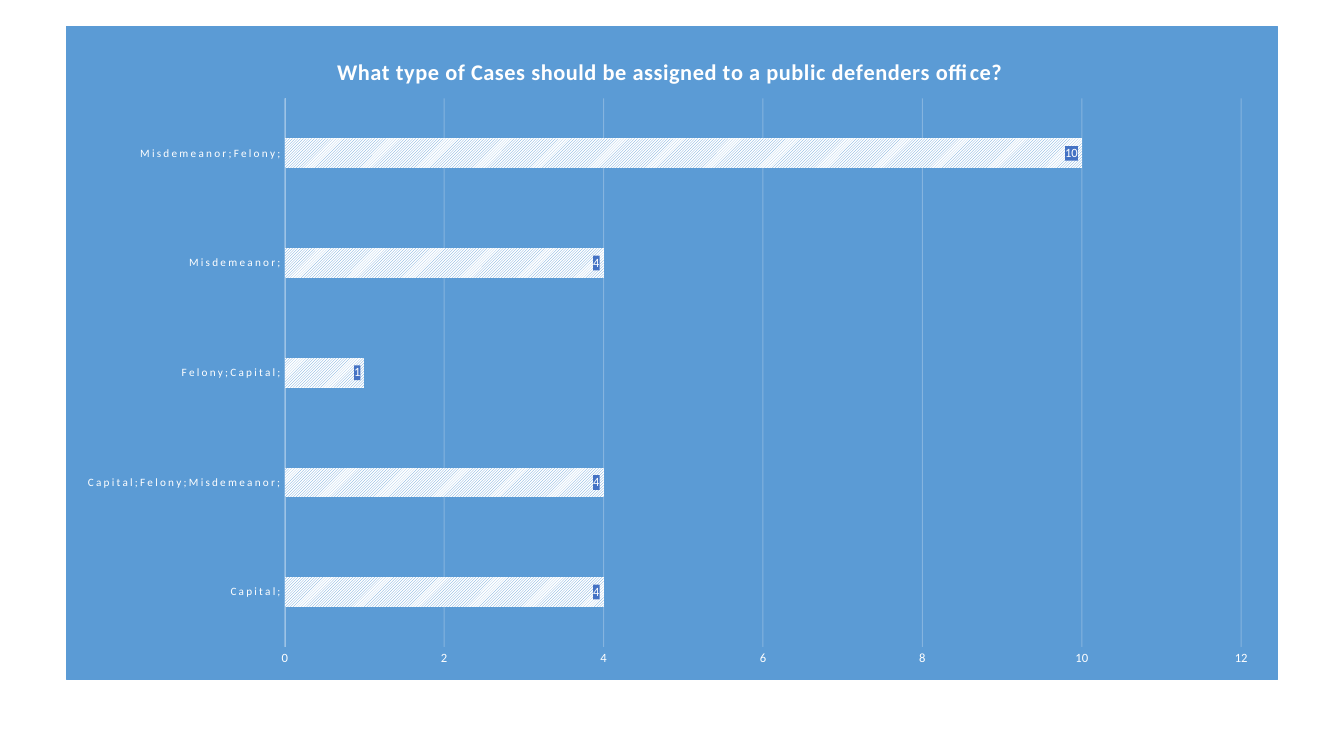
import pptx
import pptx.chart.data
import pptx.dml.color
import pptx.enum.chart
import pptx.enum.dml
import pptx.oxml
import pptx.oxml.ns
import pptx.util
from pptx.util import Cm

# Content
TITLE = "What type of Cases should be assigned to a public defenders office?"
ANSWERS = [
    ("Capital;", 4),
    ("Capital;Felony;Misdemeanor;", 4),
    ("Felony;Capital;", 1),
    ("Misdemeanor;", 4),
    ("Misdemeanor;Felony;", 10),
]
COLORS = {"panel": "5B9BD5", "text": "FFFFFF", "label": "4472C4", "axis": "9DC3E6"}
FONT = "Calibri"
NS = pptx.oxml.ns.nsdecls("c", "a")
qn = pptx.oxml.ns.qn


def rgb(name):
    return pptx.dml.color.RGBColor.from_string(COLORS[name])


def style_font(font, size, bold=False, spacing=None):
    font.name, font.size, font.bold = FONT, pptx.util.Pt(size), bold
    font.color.rgb = rgb("text")
    if spacing is not None:
        font._rPr.set("spc", str(spacing))


def add_text(tf, text, **fmt):
    p = tf.paragraphs[0]
    r = p.add_run()
    r.text = text
    style_font(r.font, **fmt)


def solid_box(fill, line=None):
    """Shape properties with a solid fill and an optional 0.75 pt border."""
    paint = '<a:solidFill><a:srgbClr val="%s"/></a:solidFill>'
    border = paint % COLORS[line] if line else "<a:noFill/>"
    return pptx.oxml.parse_xml(
        f'<c:spPr {NS}>{paint % COLORS[fill]}<a:ln w="9525">{border}</a:ln></c:spPr>')


def place(parent, index, target="", **fractions):
    """Fix a chart part at fractions of the chart's size."""
    for old in parent.findall(qn("c:layout")):
        parent.remove(old)
    inner = f'<c:layoutTarget val="{target}"/>' if target else ""
    modes = '<c:xMode val="edge"/><c:yMode val="edge"/>'
    values = "".join(f'<c:{k} val="{v}"/>' for k, v in fractions.items())
    parent.insert(index, pptx.oxml.parse_xml(
        f"<c:layout {NS}><c:manualLayout>{inner}{modes}{values}</c:manualLayout></c:layout>"))


prs = pptx.Presentation()
prs.slide_width, prs.slide_height = Cm(33.87), Cm(19.05)
s = prs.slides.add_slide(prs.slide_layouts[6])

# Chart on its blue panel
data = pptx.chart.data.CategoryChartData()
data.categories = [name for name, count in ANSWERS]
data.add_series("Series 1", [count for name, count in ANSWERS])
chart = s.shapes.add_chart(
    pptx.enum.chart.XL_CHART_TYPE.BAR_CLUSTERED,
    Cm(1.67), Cm(0.66), Cm(30.54), Cm(16.48), data).chart
chart.has_legend = False
style_font(chart.font, size=10)
space = chart.element
space.find(qn("c:chart")).addnext(solid_box("panel", line="panel"))
place(space.find(".//" + qn("c:plotArea")), 0, "inner", x=0.18, y=0.11, w=0.79, h=0.84)

# Title
chart.has_title = True
add_text(chart.chart_title.text_frame, TITLE, size=16, bold=True, spacing=50)
place(space.find(".//" + qn("c:title")), 1, x=0.22, y=0.04)

# Hatched bars
plot = chart.plots[0]
plot.gap_width, plot.overlap, plot.vary_by_categories = 269, -20, False
bars = plot.series[0]
fill = bars.format.fill
fill.patterned()
fill.pattern = pptx.enum.dml.MSO_PATTERN.LIGHT_UPWARD_DIAGONAL
fill.fore_color.rgb, fill.back_color.rgb = rgb("panel"), rgb("text")
bars.format.line.fill.background()

# Value labels
labels = bars.data_labels
labels.show_value = True
labels.position = pptx.enum.chart.XL_LABEL_POSITION.INSIDE_END
style_font(labels.font, size=9)
labels._element.find(qn("c:txPr")).addprevious(solid_box("label"))

# Axes and grid
cat_axis, val_axis = chart.category_axis, chart.value_axis
for axis, size, spacing in ((cat_axis, 8, 150), (val_axis, 9, 0)):
    axis.major_tick_mark = axis.minor_tick_mark = pptx.enum.chart.XL_TICK_MARK.NONE
    style_font(axis.tick_labels.font, size=size, spacing=spacing)
cat_axis.format.line.color.rgb = rgb("axis")
cat_axis.format.line.width = pptx.util.Pt(0.25)
val_axis.minimum_scale, val_axis.maximum_scale, val_axis.major_unit = 0, 12, 2
val_axis.format.line.fill.background()
grid = val_axis.major_gridlines.format.line
grid.color.rgb, grid.width = rgb("text"), pptx.util.Pt(0.75)
grid_color = val_axis._element.find(f".//{qn('c:majorGridlines')}//{qn('a:srgbClr')}")
grid_color.append(pptx.oxml.parse_xml(f'<a:alpha {NS} val="25000"/>'))

prs.save("out.pptx")
